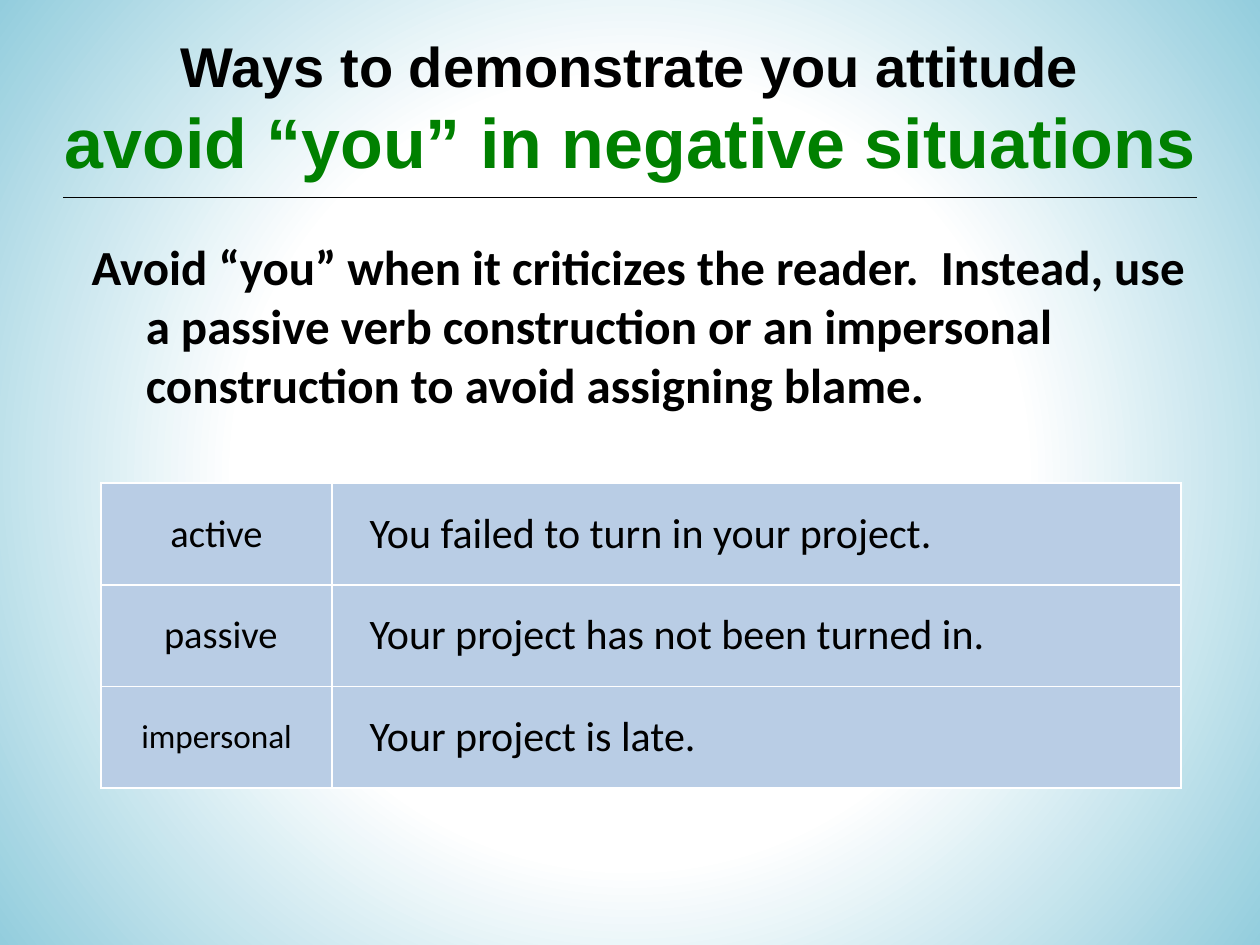
from pptx import Presentation
from pptx.dml.color import RGBColor
from pptx.enum.shapes import MSO_CONNECTOR as Conn
from pptx.enum.text import MSO_ANCHOR as Anchor, PP_ALIGN as Align
from pptx.oxml import parse_xml
from pptx.oxml.ns import nsdecls
from pptx.util import Cm, Pt


def tint(code):
    return RGBColor.from_string(code)


def add_run(para, text, size, font="Calibri", code="000000", bold=False):
    run = para.add_run()
    run.text = text
    run.font.size = Pt(size)
    run.font.name = font
    run.font.bold = bold
    run.font.color.rgb = tint(code)


deck = Presentation()
deck.slide_width, deck.slide_height = Cm(25.4), Cm(19.05)
slide = deck.slides.add_slide(deck.slide_layouts[6])

fill = slide.background.fill
fill.gradient()
for stop, spot, code in zip(fill.gradient_stops, (0.5, 1), ("FFFFFF", "93CDDD")):
    stop.position = spot
    stop.color.rgb = tint(code)
grad = slide.background._cSld.find(".//{*}gradFill")
grad.replace(grad.find("{*}lin"), parse_xml(
    f'<a:path {nsdecls("a")} path="circle">'
    '<a:fillToRect l="50000" t="50000" r="50000" b="50000"/></a:path>'))

title = slide.shapes.add_textbox(Cm(0), Cm(0.18), Cm(25.4), Cm(3.94)).text_frame
title.word_wrap = True
title.vertical_anchor = Anchor.MIDDLE
para = title.paragraphs[0]
para.alignment = Align.CENTER
add_run(para, "Ways to demonstrate you attitude", 32, "Arial", bold=True)
para.add_line_break()
add_run(para, "avoid “you” in negative situations", 40, "Arial", "008000", True)

body = slide.shapes.add_textbox(Cm(1.27), Cm(4.65), Cm(22.86), Cm(11.86)).text_frame
body.word_wrap = True
para = body.paragraphs[0]
para.space_before = Pt(5.6)
props = para._p.get_or_add_pPr()
props.set("marL", str(Cm(1.42)))
props.set("indent", str(Cm(-1.09)))
add_run(para, "Avoid “you” when it criticizes the reader.  Instead, use a passive verb "
        "construction or an impersonal construction to avoid assigning blame.", 28, bold=True)

rule = slide.shapes.add_connector(Conn.STRAIGHT, Cm(1.27), Cm(3.98), Cm(24.13), Cm(3.98))
rule.line.color.rgb = tint("000000")
rule.line.width = Pt(0.75)
rule._element.spPr.append(parse_xml(f'<a:effectLst {nsdecls("a")}/>'))

rows = [
    ("active", 22, "You failed to turn in your project."),
    (" passive", 22, "Your project has not been turned in."),
    ("impersonal", 19, "Your project is late."),
]
table = slide.shapes.add_table(3, 2, Cm(2.04), Cm(9.74), Cm(21.77), Cm(6.15)).table
table.first_row = table.horz_banding = False
table.columns[0].width, table.columns[1].width = Cm(4.65), Cm(17.12)
for line, (label, size, text) in zip(table.rows, rows):
    parts = ((label, size, Align.CENTER), (text, 24, Align.LEFT))
    for cell, (words, pts, side) in zip(line.cells, parts):
        cell.vertical_anchor = Anchor.MIDDLE
        cell.margin_left = cell.margin_right = Cm(0.76)
        cell.margin_top = cell.margin_bottom = Cm(0.5)
        para = cell.text_frame.paragraphs[0]
        para.alignment = side
        add_run(para, words, pts)
        cell.fill.solid()
        cell.fill.fore_color.rgb = tint("B9CDE5")
        for spot, edge in enumerate("LRTB"):
            cell._tc.tcPr.insert(spot, parse_xml(
                f'<a:ln{edge} {nsdecls("a")} w="{Pt(1)}"><a:solidFill>'
                f'<a:srgbClr val="FFFFFF"/></a:solidFill></a:ln{edge}>'))

deck.save("out.pptx")
